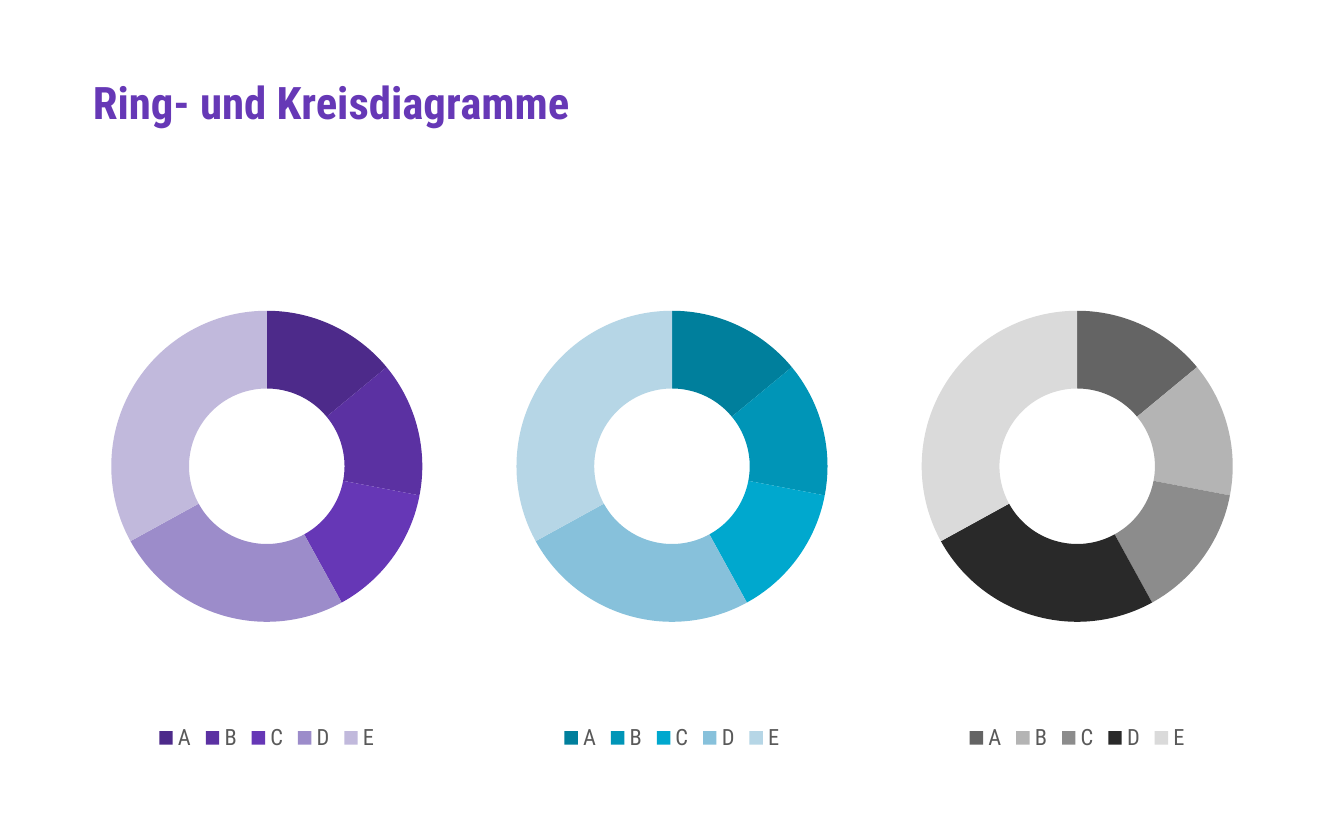
import dataclasses

import pptx
import pptx.chart.data
import pptx.dml.color
import pptx.enum.chart
import pptx.enum.text
import pptx.slide
import pptx.util
from pptx.util import Inches

FONT = "Roboto Condensed"
CATEGORIES = ["A", "B", "C", "D", "E"]
SHARES = [14, 14, 14, 25, 33]
MARGIN = 0.69
CONTENT_WIDTH = 8.62
RING_WIDTH = 2.59


@dataclasses.dataclass
class Ring:
    left: float
    colors: list[str]


def rgb(color: str) -> pptx.dml.color.RGBColor:
    return pptx.dml.color.RGBColor.from_string(color)


def set_title(page: pptx.slide.Slide, text: str) -> None:
    title = page.shapes.title
    title.left, title.top = Inches(MARGIN), Inches(0.62)
    title.width, title.height = Inches(CONTENT_WIDTH), Inches(0.32)
    frame = title.text_frame
    frame.text = text
    frame.word_wrap = True
    frame.auto_size = pptx.enum.text.MSO_AUTO_SIZE.NONE
    frame.vertical_anchor = pptx.enum.text.MSO_ANCHOR.MIDDLE
    frame.margin_left = frame.margin_right = 0
    frame.margin_top = frame.margin_bottom = 0
    paragraph = frame.paragraphs[0]
    paragraph.alignment = pptx.enum.text.PP_ALIGN.LEFT
    paragraph.line_spacing = 0.9
    font = paragraph.runs[0].font
    font.name, font.size, font.bold = FONT, pptx.util.Pt(24), True
    font.color.rgb = rgb("6638B6")


def add_ring(page: pptx.slide.Slide, ring: Ring) -> None:
    data = pptx.chart.data.CategoryChartData()
    data.categories = CATEGORIES
    data.add_series("Series 1", SHARES)
    chart = page.shapes.add_chart(
        pptx.enum.chart.XL_CHART_TYPE.DOUGHNUT,
        Inches(ring.left), Inches(1.66), Inches(RING_WIDTH), Inches(3.97), data,
    ).chart
    chart.has_title = False
    chart.font.name, chart.font.size = "Arial", pptx.util.Pt(10)
    chart.font.color.rgb = rgb("000000")

    chart.has_legend = True
    legend = chart.legend
    legend.position = pptx.enum.chart.XL_LEGEND_POSITION.BOTTOM
    legend.include_in_layout = False
    legend.font.name, legend.font.size = FONT, pptx.util.Pt(12)
    legend.font.color.rgb = rgb("595959")

    plot = chart.plots[0]
    plot.vary_by_categories = True
    for index, color in enumerate(ring.colors):
        sector = plot.series[0].points[index].format
        sector.fill.solid()
        sector.fill.fore_color.rgb = rgb(color)
        sector.line.fill.background()


def main() -> None:
    deck = pptx.Presentation()
    deck.slide_width, deck.slide_height = Inches(10), Inches(6.25)
    page = deck.slides.add_slide(deck.slide_layouts.get_by_name("Title Only"))
    set_title(page, "Ring- und Kreisdiagramme")

    palettes = [
        ["4D2A8A", "5B31A2", "6637B6", "9C8CCA", "C1B9DC"],
        ["007F9C", "0095B7", "00A8CE", "87C1DB", "B6D6E6"],
        ["646464", "B4B4B4", "8C8C8C", "292929", "DADADA"],
    ]
    pitch = (CONTENT_WIDTH - RING_WIDTH) / (len(palettes) - 1)
    for index, colors in enumerate(palettes):
        add_ring(page, Ring(MARGIN + index * pitch, colors))

    deck.save("out.pptx")


if __name__ == "__main__":
    main()
